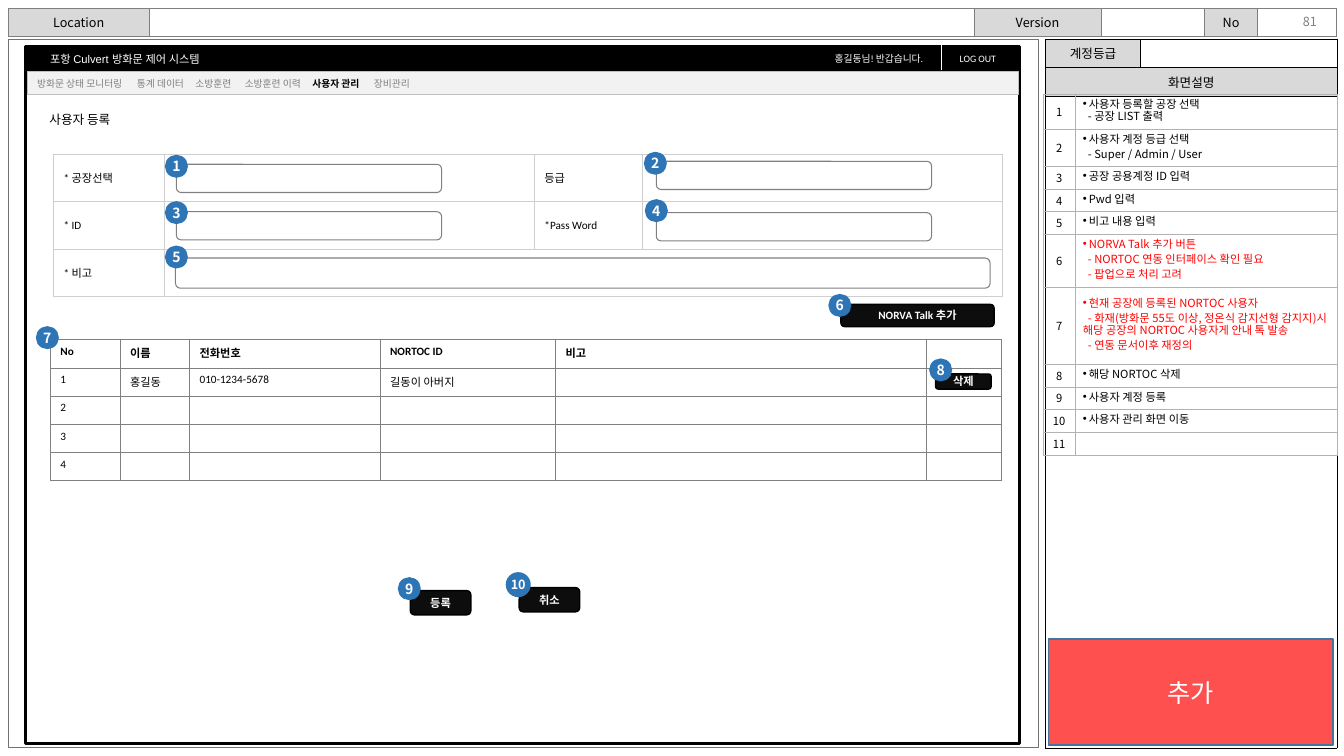
from lxml.etree import SubElement
from pptx import Presentation
from pptx.dml.color import RGBColor
from pptx.enum.shapes import MSO_CONNECTOR, MSO_SHAPE
from pptx.enum.text import MSO_ANCHOR, MSO_AUTO_SIZE, PP_ALIGN
from pptx.oxml.ns import qn
from pptx.util import Inches, Pt

NOTO, CALIBRI, ARIAL = "Noto Sans CJK KR", "Calibri", "Arial"
BLACK, WHITE, RED, GRAY, LABEL = "000000", "FFFFFF", "FF0000", "808080", "D9D9D9"
LEFT, CENTER, RIGHT = PP_ALIGN.LEFT, PP_ALIGN.CENTER, PP_ALIGN.RIGHT
TOP, MIDDLE = MSO_ANCHOR.TOP, MSO_ANCHOR.MIDDLE

HEADER = [["Location", "", "Version", "", "No", ""]]
SIDEBAR = [["계정등급", ""], ["화면설명", ""], ["", ""]]
FORM = [["* 공장선택", "", "등급", ""], ["* ID", "", "*Pass Word", ""], ["* 비고", "", "", ""]]
USERS = [
    ["No", "이름", "전화번호", "NORTOC ID", "비고", ""],
    ["1", "홍길동", "010-1234-5678", "길동이 아버지", "", ""],
] + [[str(n), "", "", "", "", ""] for n in (2, 3, 4)]

MENU = ["방화문 상태 모니터링", "통계 데이터", "소방훈련", "소방훈련 이력", "사용자 관리", "장비관리"]
MENU_TABS = [0.99, 1.57, 2.06, 2.73, 3.34]
ACTIVE_MENU = "사용자 관리"

NOTES = [
    (0.35, BLACK, ["사용자 등록할 공장 선택", "- 공장 LIST 출력"]),
    (0.37, BLACK, ["사용자 계정 등급 선택", "- Super / Admin / User"]),
    (0.23, BLACK, ["공장 공용계정 ID 입력"]),
    (0.22, BLACK, ["Pwd 입력"]),
    (0.22, BLACK, ["비고 내용 입력"]),
    (0.53, RED, ["NORVA Talk 추가 버튼", "- NORTOC 연동 인터페이스 확인 필요", "- 팝업으로 처리 고려"]),
    (0.76, RED, ["현재 공장에 등록된 NORTOC 사용자",
                 "- 화재(방화문 55도 이상, 정온식 감지선형 감지지)시 해당 공장의 NORTOC 사용자게 안내 톡 발송",
                 "- 연동 문서이후 재정의"]),
    (0.23, BLACK, ["해당 NORTOC 삭제"]),
    (0.22, BLACK, ["사용자 계정 등록"]),
    (0.23, BLACK, ["사용자 관리 화면 이동"]),
    (0.23, BLACK, []),
]
INPUTS = [(1.75, 1.63, 2.63, 0.28), (1.75, 2.1, 2.63, 0.28), (6.51, 1.6, 2.73, 0.28),
          (6.51, 2.11, 2.73, 0.28), (1.74, 2.56, 8.08, 0.3)]
BUTTONS = [("등록", 4.07, 5.86, 0.6, 0.24), ("취소", 5.15, 5.83, 0.6, 0.24),
           ("NORVA Talk 추가", 8.34, 3.02, 1.52, 0.22), ("삭제", 9.28, 3.71, 0.55, 0.15)]
BADGES = [(1.65, 1.55), (6.4, 1.52), (1.65, 2.01), (6.41, 1.99), (1.65, 2.45),
          (8.23, 2.93), (0.37, 3.25), (9.23, 3.57), (3.96, 5.74), (5.03, 5.69)]
LABELS = [("홍길동님! 반갑습니다.", 8.18, 0.47, 1.17, 0.22, 7, CALIBRI, LEFT),
          ("LOG OUT", 9.42, 0.47, 0.62, 0.22, 7, CALIBRI, LEFT),
          ("포항 Culvert 방화문 제어 시스템", 0.32, 0.47, 1.84, 0.24, 8, ARIAL, CENTER)]

prs = Presentation()
prs.slide_width, prs.slide_height = Inches(13.33), Inches(7.5)
s = prs.slides.add_slide(prs.slide_layouts[5])


def rgb(color):
    return RGBColor.from_string(color)


def format_run(r, size, color, font=NOTO, bold=False):
    r.font.size, r.font.bold, r.font.name = Pt(size), bold, font
    r.font.color.rgb = rgb(color)
    SubElement(r._r.get_or_add_rPr(), qn("a:ea"), typeface=NOTO)


def write(tf, text, size, color, font=NOTO, bold=False, align=LEFT):
    tf.text = text
    p = tf.paragraphs[0]
    p.alignment = align
    for r in p.runs:
        format_run(r, size, color, font, bold)
    if not text:
        SubElement(p._p, qn("a:endParaRPr"), sz=str(size * 100))


def margins(obj, x, y):
    obj.margin_left = obj.margin_right = Inches(x)
    obj.margin_top = obj.margin_bottom = Inches(y)


def add_box(kind, box, fill, line, width):
    sp = s.shapes.add_shape(kind, *map(Inches, box))
    sp.shadow.inherit = False
    if fill:
        sp.fill.solid()
        sp.fill.fore_color.rgb = rgb(fill)
    else:
        sp.fill.background()
    sp.line.color.rgb = rgb(line)
    sp.line.width = Pt(width)
    sp.text_frame.vertical_anchor = MIDDLE
    return sp


def add_label(text, x, y, w, h, size, font, align, color=WHITE):
    sp = s.shapes.add_textbox(*map(Inches, (x, y, w, h)))
    sp.text_frame.word_wrap = False
    write(sp.text_frame, text, size, color, font, align=align)
    return sp


def add_grid(x, y, cols, rows, data, border, width, style, merges=()):
    frame = s.shapes.add_table(len(rows), len(cols), *map(Inches, (x, y, sum(cols), sum(rows))))
    table = frame.table
    table.first_row = table.horz_banding = False
    for col, w in zip(table.columns, cols):
        col.width = Inches(w)
    for row, h in zip(table.rows, rows):
        row.height = Inches(h)
    for i, line in enumerate(data):
        for j, text in enumerate(line):
            cell = table.cell(i, j)
            look = dict(size=8, font=NOTO, bold=False, align=LEFT, anchor=MIDDLE,
                        fill=None, margin=(0.1, 0.05))
            look.update(style(i, j, text))
            for side in ("lnL", "lnR", "lnT", "lnB"):
                ln = SubElement(cell._tc.get_or_add_tcPr(), qn("a:" + side), w=str(Pt(width)))
                SubElement(SubElement(ln, qn("a:solidFill")), qn("a:srgbClr"), val=border)
            if look["fill"]:
                cell.fill.solid()
                cell.fill.fore_color.rgb = rgb(look["fill"])
            else:
                cell.fill.background()
            margins(cell, *look["margin"])
            cell.vertical_anchor = look["anchor"]
            write(cell.text_frame, text, look["size"], BLACK, look["font"], look["bold"], look["align"])
    for first, last in merges:
        table.cell(*first).merge(table.cell(*last))
    return table


def header_style(i, j, text):
    return dict(size=9, align=CENTER, margin=(0.05, 0.05), fill=LABEL if text else None)


def sidebar_style(i, j, text):
    return dict(header_style(i, j, text), anchor=TOP)


def form_style(i, j, text):
    return dict(font=CALIBRI, fill=WHITE)


def users_style(i, j, text):
    return dict(font=CALIBRI, bold=i == 0, anchor=TOP)


def notes_style(i, j, text):
    return dict(align=CENTER, margin=(0.04, 0)) if j == 0 else dict(margin=(0.08, 0.04))


def write_note(cell, lines, color):
    tf = cell.text_frame
    for k, text in enumerate(lines):
        p = tf.paragraphs[0] if k == 0 else tf.add_paragraph()
        p.text = text
        p.line_spacing = Pt(9)
        if k and lines is not NOTES[0][2]:
            p.space_before = Pt(1.6)
        pPr = p._p.get_or_add_pPr()
        if k == 0:
            pPr.set("marL", str(Inches(0.06)))
            pPr.set("indent", str(-Inches(0.06)))
            SubElement(pPr, qn("a:buFont"), typeface=ARIAL)
            SubElement(pPr, qn("a:buChar"), char="•")
        else:
            pPr.set("marL", "0")
            pPr.set("indent", str(Inches(0.05)))
        format_run(p.runs[0], 8, color)


title = s.shapes.title
title.left, title.top, title.width, title.height = map(Inches, (0.39, 1.06, 0.86, 0.25))
title.text_frame.word_wrap = False
title.text_frame.auto_size = MSO_AUTO_SIZE.NONE
title.text_frame.vertical_anchor = TOP
write(title.text_frame, "사용자 등록", 9, BLACK, CALIBRI)

number = add_label("81", 12.36, 0.05, 0.8, 0.32, 9, NOTO, RIGHT, "7F7F7F")
number.text_frame.vertical_anchor = MIDDLE
add_grid(0.08, 0.08, [1.4, 8.18, 1.26, 1.03, 0.52, 0.79], [0.28], HEADER, "7F7F7F", 0.75, header_style)
add_grid(10.37, 0.39, [0.94, 1.95], [0.28, 0.28, 6.47], SIDEBAR, BLACK, 0.25, sidebar_style,
         [((1, 0), (1, 1)), ((2, 0), (2, 1))])
add_box(MSO_SHAPE.RECTANGLE, (0.08, 0.39, 10.22, 7.03), None, "767171", 0.75)
add_box(MSO_SHAPE.RECTANGLE, (0.25, 0.46, 9.86, 6.92), None, BLACK, 2.25)
add_box(MSO_SHAPE.RECTANGLE, (0.25, 0.46, 9.84, 0.25), BLACK, BLACK, 0.25)
for label in LABELS:
    add_label(*label)
divider = s.shapes.add_connector(MSO_CONNECTOR.STRAIGHT, *map(Inches, (9.34, 0.44, 9.34, 0.69)))
divider.line.color.rgb = rgb(WHITE)
divider.line.width = Pt(0.5)
SubElement(divider._element.spPr, qn("a:effectLst"))

menu = add_box(MSO_SHAPE.RECTANGLE, (0.27, 0.71, 9.83, 0.23), "F2F2F2", "BFBFBF", 0.25)
p = menu.text_frame.paragraphs[0]
p.alignment = LEFT
tabs = SubElement(p._p.get_or_add_pPr(), qn("a:tabLst"))
for stop in MENU_TABS:
    SubElement(tabs, qn("a:tab"), pos=str(Inches(stop)), algn="l")
for k, item in enumerate(MENU):
    r = p.add_run()
    r.text = "\t" + item if k else item
    active = item == ACTIVE_MENU
    format_run(r, 7, BLACK if active else GRAY, bold=active)

notes = add_grid(10.35, 0.93, [0.31, 2.6], [h for h, _, _ in NOTES],
                 [[str(n), ""] for n in range(1, len(NOTES) + 1)], "B2B2B2", 0.25, notes_style)
for i, (_, color, lines) in enumerate(NOTES):
    write_note(notes.cell(i, 1), lines, color)

add_grid(0.53, 1.53, [1.1, 3.67, 1.07, 3.57], [0.47] * 3, FORM, "D0CECE", 0.5, form_style,
         [((2, 1), (2, 3))])
add_grid(0.5, 3.37, [0.69, 0.69, 1.89, 1.74, 3.68, 0.74], [0.28] * 5, USERS, GRAY, 0.5, users_style)
for box in INPUTS:
    add_box(MSO_SHAPE.ROUNDED_RECTANGLE, box, WHITE, GRAY, 0.75)
for text, *box in BUTTONS:
    sp = add_box(MSO_SHAPE.ROUNDED_RECTANGLE, box, "0D0D0D", BLACK, 1)
    write(sp.text_frame, text, 8, WHITE, CALIBRI, True, CENTER)
for n, (x, y) in enumerate(BADGES, 1):
    d, size = (0.2, 10) if n < 10 else (0.22, 9)
    sp = add_box(MSO_SHAPE.OVAL, (x, y, d, d), "2E75B6", "2E75B6", 2)
    margins(sp.text_frame, 0, 0)
    sp.text_frame.word_wrap = False
    write(sp.text_frame, str(n), size, WHITE, bold=True, align=CENTER)
added = add_box(MSO_SHAPE.RECTANGLE, (10.4, 6.34, 2.82, 1.05), "FF5050", "43739E", 1)
write(added.text_frame, "추가", 18, WHITE, CALIBRI, align=CENTER)

prs.save("out.pptx")
